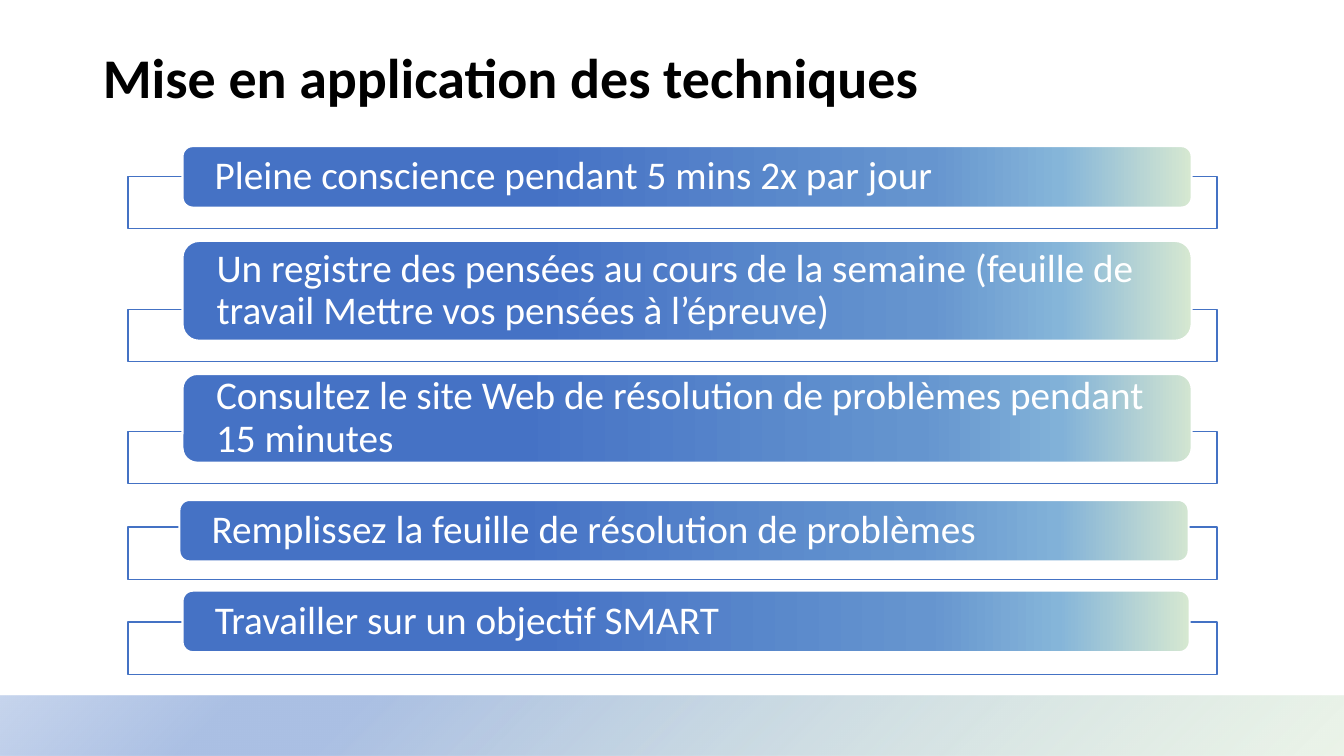
from lxml import etree
from pptx import Presentation
from pptx.dml.color import RGBColor
from pptx.enum.shapes import MSO_SHAPE
from pptx.enum.text import MSO_ANCHOR, MSO_AUTO_SIZE, PP_ALIGN
from pptx.oxml.ns import qn
from pptx.util import Inches, Pt

RECT, ROUNDED = MSO_SHAPE.RECTANGLE, MSO_SHAPE.ROUNDED_RECTANGLE
MIDDLE, LEFT, NO_FIT = MSO_ANCHOR.MIDDLE, PP_ALIGN.LEFT, MSO_AUTO_SIZE.NONE
WIDTH, HEIGHT = Inches(13.33), Inches(7.5)
FONT = "Calibri"
BLUE, WHITE, BLACK = "4472C4", "FFFFFF", "000000"
FOOTER_STOPS = [(0, "D6E8D1", 47), (74, "ABC0E4", 100),
                (83, "ABC0E4", 100), (100, "C7D5ED", 100)]
BAR_STOPS = [(35, "4572C5", 100), (74, "6695CF", 100),
             (87, "85B5D9", 100), (100, "D6E8D1", 100)]
DEEP_STOPS = [(33, "4572C5", 100), (73, "6595CF", 100),
              (87, "81B1D8", 100), (100, "D2E5D1", 100)]

# Each row: text, bar left, top, width, height, frame top, gradient stops
TECHNIQUES = [
    ("Pleine conscience pendant 5 mins 2x par jour",
     13.58, 19.33, 75.09, 8.13, 23.33, BAR_STOPS),
    ("Un registre des pensées au cours de la semaine (feuille de travail "
     "Mettre vos pensées à l’épreuve)",
     13.58, 31.87, 75.09, 13.2, 40.93, BAR_STOPS),
    ("Consultez le site Web de résolution de problèmes pendant 15 minutes",
     13.58, 49.47, 75.09, 11.73, 57.07, DEEP_STOPS),
    ("Remplissez la feuille de résolution de problèmes",
     13.35, 66.13, 75.09, 8.13, 69.73, DEEP_STOPS),
    ("Travailler sur un objectif SMART",
     13.58, 78.13, 74.94, 8.13, 82.27, BAR_STOPS),
]


def rgb(color):
    return RGBColor.from_string(color)


def shares(left, top, width, height):
    return (int(WIDTH * left / 100), int(HEIGHT * top / 100),
            int(WIDTH * width / 100), int(HEIGHT * height / 100))


def add_box(s, kind, area, line=None, weight=1):
    sp = s.shapes.add_shape(kind, *shares(*area))
    sp.shadow.inherit = False
    sp.fill.solid()
    sp.fill.fore_color.rgb = rgb(WHITE)
    if line:
        sp.line.color.rgb = rgb(line)
        sp.line.width = Pt(weight)
    else:
        sp.line.fill.background()
    return sp


def add_alpha(color_element, percent):
    etree.SubElement(color_element, qn("a:alpha"), val=str(percent * 1000))


def set_gradient(sp, stops, radial=False):
    solid = sp._element.spPr.find(qn("a:solidFill"))
    grad = etree.Element(qn("a:gradFill"), rotWithShape="1")
    stop_list = etree.SubElement(grad, qn("a:gsLst"))
    for position, color, alpha in stops:
        stop = etree.SubElement(stop_list, qn("a:gs"), pos=str(position * 1000))
        clr = etree.SubElement(stop, qn("a:srgbClr"), val=color)
        if alpha < 100:
            add_alpha(clr, alpha)
    if radial:
        shade = etree.SubElement(grad, qn("a:path"), path="circle")
        etree.SubElement(shade, qn("a:fillToRect"), l="100000", t="100000")
    else:
        etree.SubElement(grad, qn("a:lin"), ang="0", scaled="0")
    solid.getparent().replace(solid, grad)


def set_text(sp, text, size, color, bold=False):
    tf = sp.text_frame
    tf.text = text
    tf.word_wrap = True
    tf.auto_size = NO_FIT
    tf.vertical_anchor = MIDDLE
    p = tf.paragraphs[0]
    p.alignment = LEFT
    p.line_spacing = 0.9
    p.font.name = FONT
    p.font.size = Pt(size)
    p.font.bold = bold
    p.font.color.rgb = rgb(color)
    return tf


def add_footer(s):
    sp = add_box(s, RECT, (0, 92, 100, 8))
    set_gradient(sp, FOOTER_STOPS, radial=True)


def add_title(s, text):
    title = s.shapes.title
    title.left, title.top, title.width, title.height = shares(6.9, 3.33, 86.27, 14.67)
    set_text(title, text, 40, BLACK, bold=True)


def add_technique(s, text, left, top, width, height, frame_top, stops):
    frame = add_box(s, RECT, (9.53, frame_top, 81.02, 6.93), BLUE)
    add_alpha(frame._element.spPr.find(qn("a:solidFill"))[0], 90)
    bar = add_box(s, ROUNDED, (left, top, width, height), WHITE, 1.5)
    set_gradient(bar, stops)
    tf = set_text(bar, text, 28, WHITE)
    tf.margin_left = tf.margin_right = Inches(0.29)
    tf.margin_top = tf.margin_bottom = 0


def main():
    prs = Presentation()
    prs.slide_width, prs.slide_height = WIDTH, HEIGHT
    s = prs.slides.add_slide(prs.slide_layouts[5])
    add_footer(s)
    add_title(s, "Mise en application des techniques")
    for technique in TECHNIQUES:
        add_technique(s, *technique)
    prs.save("out.pptx")


if __name__ == "__main__":
    main()
